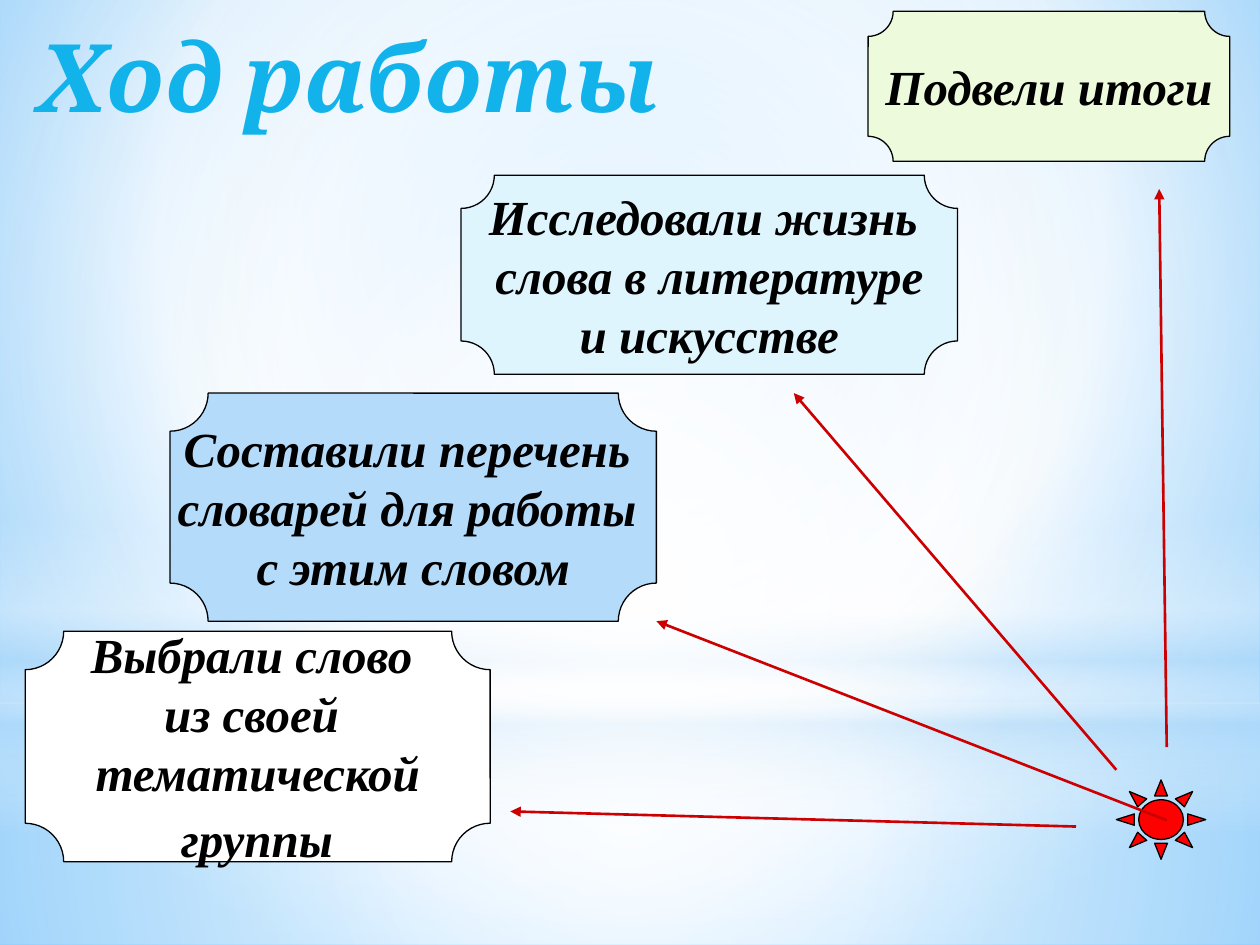
from lxml import etree
from pptx import Presentation
from pptx.dml.color import RGBColor
from pptx.enum import shapes, text
from pptx.oxml import ns
from pptx.util import Inches, Pt

COLORS = {
    "title": "12B2EB", "ink": "000000", "arrow": "CC0000", "sun": "FF0000",
    "lime": "EDFBDC", "ice": "DFF5FD", "sky": "B4DCFA", "white": "FFFFFF",
    "light": "9ED5FF", "deep": "5BB9FF",
}
HEADING = "Ход работы"
CENTER = (50, 50, 50, 50)
# Gradient stops: position %, color name, opacity %
BACKGROUND = [(0, "light", 100), (60, "white", 100), (100, "deep", 100)]
GLOWS = [  # preset shape, box, stops, focus (None means a vertical linear gradient)
    ("RECTANGLE", (0, 5.58, 10, 1.92),
     [(0, "white", 91), (37, "white", 76), (100, "sky", 79)], CENTER),
    ("RECTANGLE", (0, 0, 10, 5.58),
     [(0, "white", 89), (48, "white", 62), (100, "sky", 79)], CENTER),
    ("RECTANGLE", (0, 4.12, 10, 2.5),
     [(0, "white", 0), (29, "white", 30), (45, "sky", 40), (55, "white", 26),
      (65, "sky", 60), (100, "white", 0)], None),
    ("OVAL", (0, 1.75, 10, 5.58), [(0, "white", 100), (56, "white", 0)], CENTER),
]
SUN = (8.86, 6.19, 0.71, 0.63)
STEPS = [  # lines, box, fill, arrow start, arrow end
    (["Подвели итоги"], (6.89, 0.09, 2.87, 1.19), "lime", (9.26, 5.93), (9.2, 1.5)),
    (["Исследовали жизнь ", "слова в литературе", "и искусстве"],
     (3.66, 1.39, 3.94, 1.58), "ice", (8.86, 6.11), (6.3, 3.12)),
    (["Составили перечень ", "словарей для работы ", "с этим словом"],
     (1.35, 3.12, 3.86, 1.81), "sky", (9.26, 6.51), (5.21, 4.93)),
    (["Выбрали слово ", "из своей ", "тематической", " группы"],
     (0.2, 5.01, 3.69, 1.83), "white", (8.54, 6.56), (4.05, 6.44)),
]


def rgb(name):
    return RGBColor.from_string(COLORS[name])


def inches(values):
    return [Inches(value) for value in values]


def add_child(parent, tag, **attributes):
    child = etree.SubElement(parent, ns.qn(tag))
    for key, value in attributes.items():
        child.set(key, str(value))
    return child


def paint_gradient(fill, element, stops, focus):
    """Swap the solid fill in element for a gradient, radial around focus if given."""
    fill.solid()
    solid = element.find(".//" + ns.qn("a:solidFill"))
    gradient = etree.Element(ns.qn("a:gradFill"), rotWithShape="1")
    stop_list = add_child(gradient, "a:gsLst")
    for position, color, opacity in stops:
        stop = add_child(stop_list, "a:gs", pos=position * 1000)
        value = add_child(stop, "a:srgbClr", val=COLORS[color])
        if opacity < 100:
            add_child(value, "a:alpha", val=opacity * 1000)
    if focus is None:
        add_child(gradient, "a:lin", ang=90 * 60000, scaled=0)
    else:
        circle = add_child(gradient, "a:path", path="circle")
        sides = {side: value * 1000 for side, value in zip("ltrb", focus)}
        add_child(circle, "a:fillToRect", **sides)
    solid.getparent().replace(solid, gradient)


def add_run(paragraph, content, font="Times New Roman", size=28, color="ink", strong=True):
    run = paragraph.add_run()
    run.text = content
    run.font.name = font
    run.font.size = Pt(size)
    run.font.bold = run.font.italic = strong
    run.font.color.rgb = rgb(color)


def add_outlined(container, preset, box, fill, adjustment):
    shape = container.add_shape(preset, *inches(box))
    shape.adjustments[0] = adjustment
    shape.shadow.inherit = False
    shape.fill.solid()
    shape.fill.fore_color.rgb = rgb(fill)
    shape.line.color.rgb = rgb("ink")
    shape.line.width = Pt(0.75)
    return shape


def add_plaque(container, lines, box, fill):
    plaque = add_outlined(container, shapes.MSO_SHAPE.PLAQUE, box, fill, 0.167)
    frame = plaque.text_frame
    frame.word_wrap = False
    frame.vertical_anchor = text.MSO_ANCHOR.MIDDLE
    for index, line in enumerate(lines):
        paragraph = frame.add_paragraph() if index else frame.paragraphs[0]
        paragraph.alignment = text.PP_ALIGN.CENTER
        add_run(paragraph, line)
    return plaque


def add_arrow(container, start, end):
    arrow = container.add_connector(
        shapes.MSO_CONNECTOR.STRAIGHT, *inches(start), *inches(end))
    arrow.line.color.rgb = rgb("arrow")
    arrow.line.width = Pt(1.5)
    add_child(arrow.line._get_or_add_ln(), "a:tailEnd", type="triangle")
    add_child(arrow.element.spPr, "a:effectLst")


def add_title(slide):
    title = slide.shapes.title
    title.left, title.top, title.width, title.height = inches((0.2, 0.09, 6.22, 0.62))
    frame = title.text_frame
    frame.vertical_anchor = text.MSO_ANCHOR.TOP
    frame.auto_size = text.MSO_AUTO_SIZE.NONE
    paragraph = frame.paragraphs[0]
    paragraph.alignment = text.PP_ALIGN.LEFT
    add_run(paragraph, HEADING, font="Cambria", size=54, color="title")
    # The title goes in front of the glows
    title.element.getparent().append(title.element)


def main():
    presentation = Presentation()
    presentation.slide_width, presentation.slide_height = Inches(10), Inches(7.5)
    slide = presentation.slides.add_slide(presentation.slide_layouts[5])
    paint_gradient(slide.background.fill, slide.element, BACKGROUND, (20, 10, 20, 60))

    for preset, box, stops, focus in GLOWS:
        glow = slide.shapes.add_shape(shapes.MSO_SHAPE[preset], *inches(box))
        glow.shadow.inherit = False
        glow.line.fill.background()
        paint_gradient(glow.fill, glow.element.spPr, stops, focus)

    add_title(slide)
    add_outlined(slide.shapes, shapes.MSO_SHAPE.SUN, SUN, "sun", 0.25)
    for lines, box, fill, start, end in STEPS:
        group = slide.shapes.add_group_shape()
        plaque = add_plaque(group.shapes, lines, box, fill)
        add_arrow(group.shapes, start, end)
    # The first step ends with a larger plain space that opens up its last line
    add_run(plaque.text_frame.paragraphs[-1], " ", size=32, strong=False)

    presentation.save("out.pptx")


if __name__ == "__main__":
    main()
